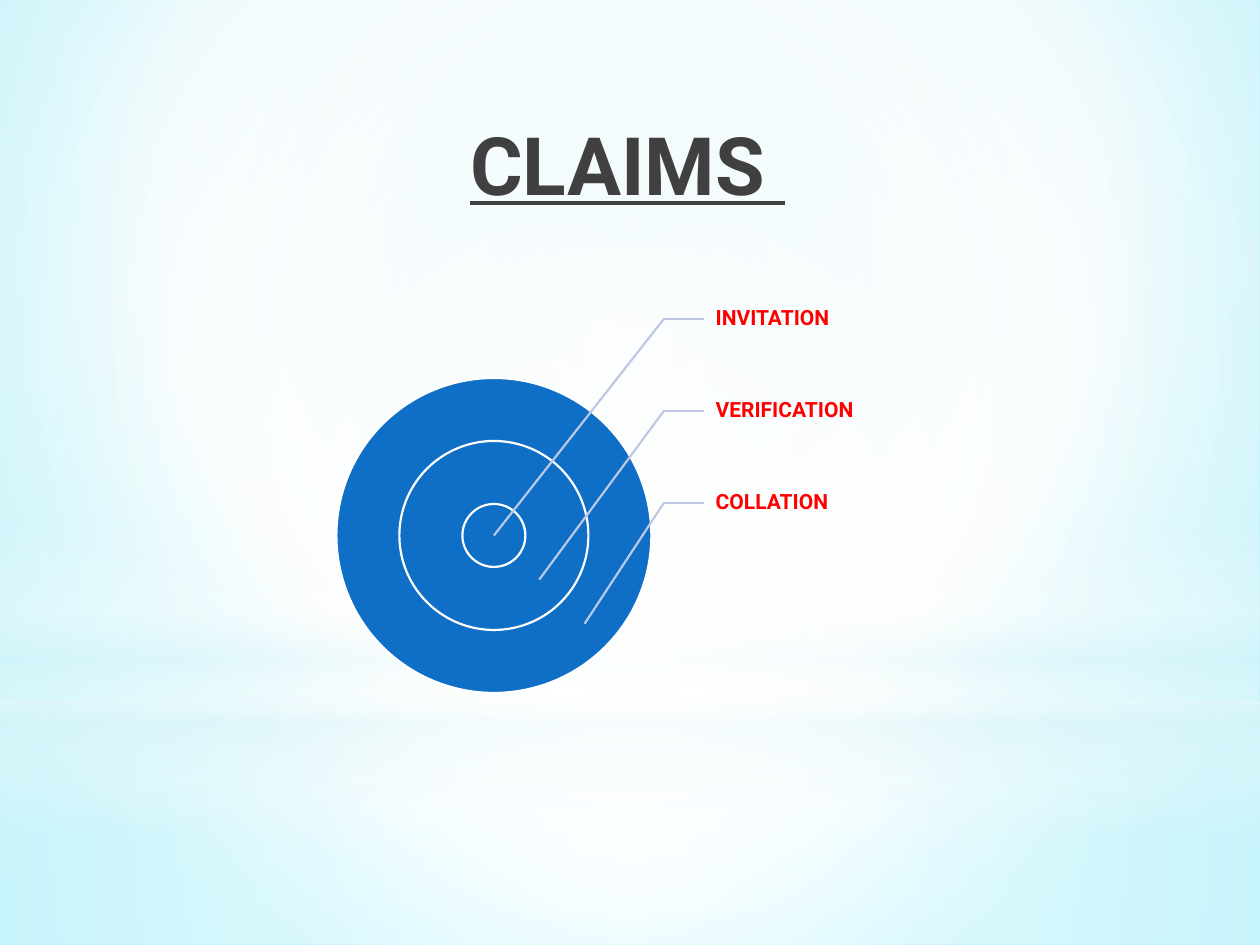
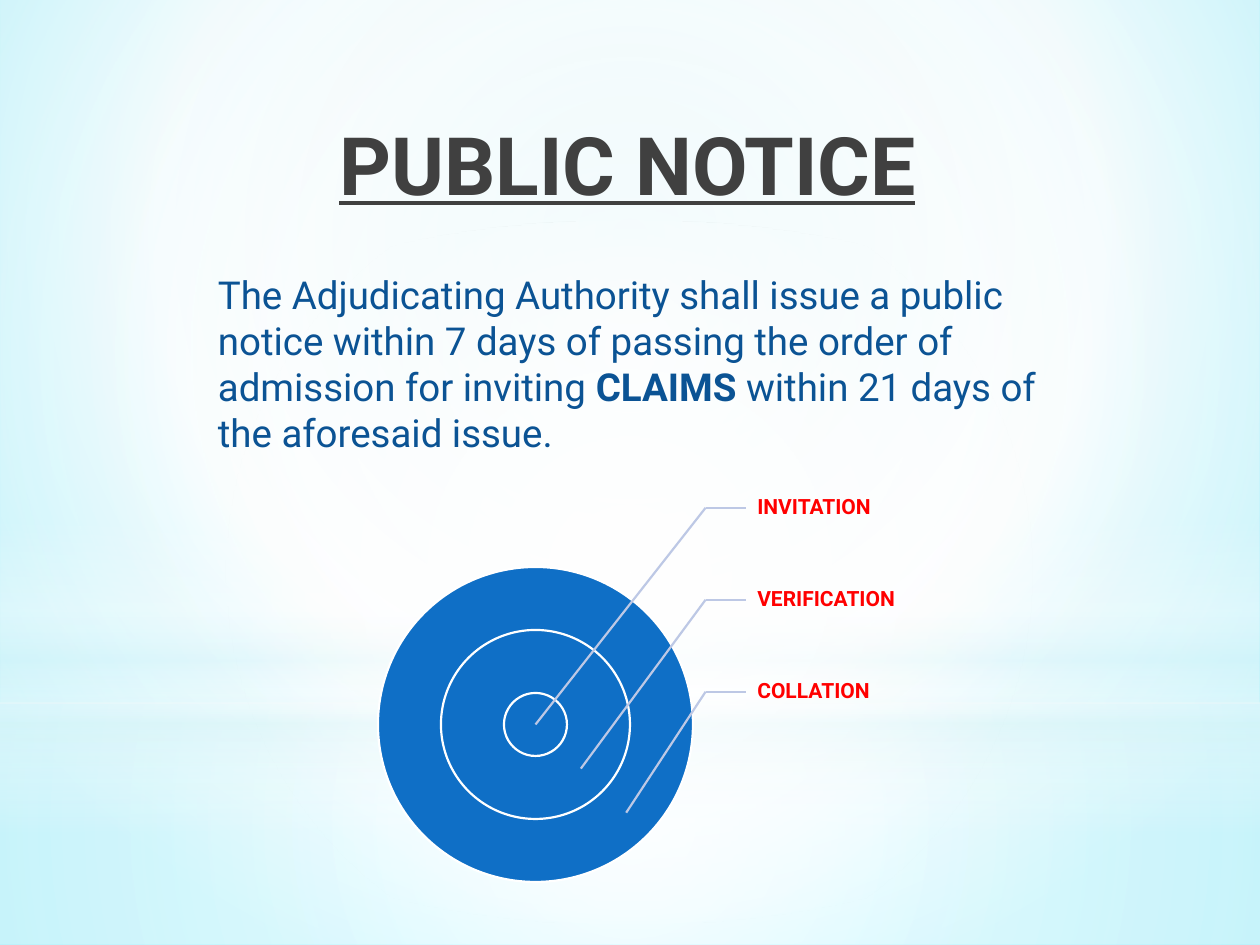
from dataclasses import dataclass

from lxml.etree import SubElement
from pptx import Presentation
from pptx.dml.color import RGBColor
from pptx.enum.shapes import MSO_CONNECTOR, MSO_SHAPE
from pptx.enum.text import MSO_ANCHOR, PP_ALIGN
from pptx.oxml.ns import qn
from pptx.util import Inches, Pt


@dataclass(frozen=True)
class Theme:
    font: str = "Roboto"
    title: str = "404040"
    body: str = "0B5394"
    label: str = "FF0000"
    ring: str = "0F6FC6"
    ring_edge: str = "FFFFFF"
    leader: str = "BDC8E5"
    title_size: float = 46
    title_leading: float = 54
    body_size: float = 22
    body_leading: float = 26.3
    label_size: float = 12
    line_width: float = 1.25


@dataclass(frozen=True)
class Box:
    left: float
    top: float
    width: float
    height: float

    def lengths(self) -> tuple:
        return tuple(Inches(v) for v in (self.left, self.top, self.width, self.height))


@dataclass(frozen=True)
class Gradient:
    """Stops are (position %, colour, opacity %); without a focus it runs downwards."""
    stops: tuple
    focus: tuple | None = None


@dataclass(frozen=True)
class Glow:
    box: Box
    outline: MSO_SHAPE
    gradient: Gradient


@dataclass(frozen=True)
class Phrase:
    text: str
    bold: bool = False


@dataclass(frozen=True)
class ClaimsSlide:
    title: str
    center_x: float
    center_y: float
    body: tuple = ()


THEME = Theme()
MIDDLE = (50, 50, 50, 50)
BACKGROUND = Gradient(
    ((0, "CAF0F6", 100), (60, "FFFFFF", 100), (100, "79EDFF", 100)), (20, 10, 20, 60))
GLOWS = (
    Glow(Box(0, 5.58, 10, 1.92), MSO_SHAPE.RECTANGLE, Gradient(
        ((0, "FFFFFF", 91), (37, "FFFFFF", 76), (100, "DBF5F9", 79)), MIDDLE)),
    Glow(Box(0, 0, 10, 5.58), MSO_SHAPE.RECTANGLE, Gradient(
        ((0, "FFFFFF", 89), (48, "FFFFFF", 62), (100, "DBF5F9", 79)), MIDDLE)),
    Glow(Box(0, 4.12, 10, 2.5), MSO_SHAPE.RECTANGLE, Gradient(
        ((0, "FFFFFF", 0), (29, "FFFFFF", 30), (45, "DBF5F9", 40),
         (55, "FFFFFF", 26), (65, "DBF5F9", 60), (100, "FFFFFF", 0)))),
    Glow(Box(0, 1.75, 10, 5.58), MSO_SHAPE.OVAL, Gradient(
        ((0, "FFFFFF", 100), (56, "FFFFFF", 0)), MIDDLE)),
)
TITLE_BOX = Box(1.42, 0.83, 7.12, 1)
BODY_BOX = Box(1.58, 2.08, 7, 1.75)
STEPS = ("INVITATION", "VERIFICATION", "COLLATION")
RING_DIAMETERS = (2.5, 1.5, 0.5)
STEP_PITCH = 0.73
SLIDES = (
    ClaimsSlide("CLAIMS ", 3.92, 4.25),
    ClaimsSlide("PUBLIC NOTICE", 4.25, 5.75, (
        Phrase("The Adjudicating Authority shall issue a public notice within 7 days "
               "of passing the order of admission for inviting "),
        Phrase("CLAIMS", bold=True),
        Phrase(" within 21 days of the aforesaid issue."),
    )),
)


def apply_gradient(properties, gradient: Gradient) -> None:
    """Swap the solid fill in a properties element for a gradient."""
    solid = properties.find(qn("a:solidFill"))
    fill = properties.makeelement(qn("a:gradFill"), {"rotWithShape": "1"})
    stops = SubElement(fill, qn("a:gsLst"))
    for position, color, opacity in gradient.stops:
        stop = SubElement(stops, qn("a:gs"), pos=str(position * 1000))
        rgb = SubElement(stop, qn("a:srgbClr"), val=color)
        if opacity < 100:
            SubElement(rgb, qn("a:alpha"), val=str(opacity * 1000))
    if gradient.focus:
        circle = SubElement(fill, qn("a:path"), {"path": "circle"})
        sides = {side: str(v * 1000) for side, v in zip("ltrb", gradient.focus)}
        SubElement(circle, qn("a:fillToRect"), sides)
    else:
        SubElement(fill, qn("a:lin"), ang="5400000", scaled="0")
    properties.replace(solid, fill)


def decorate_layout(layout, slide) -> None:
    """Give the layout its background and glows, which every slide then shows."""
    for placeholder in list(layout.placeholders):
        layout.element.cSld.spTree.remove(placeholder.element)
    layout.background.fill.solid()
    apply_gradient(layout.element.cSld.find(".//" + qn("p:bgPr")), BACKGROUND)
    for glow in GLOWS:
        shape = slide.shapes.add_shape(glow.outline, *glow.box.lengths())
        shape.shadow.inherit = False
        shape.line.fill.background()
        shape.fill.solid()
        apply_gradient(shape.element.spPr, glow.gradient)
        layout.element.cSld.spTree.append(shape.element)


def add_text(shapes, box: Box, phrases: tuple, size: float, color: str,
             margins: tuple, leading, anchor=MSO_ANCHOR.TOP):
    """Add a wrapped one-paragraph text box and return its paragraph."""
    frame = shapes.add_textbox(*box.lengths()).text_frame
    frame.word_wrap = True
    frame.vertical_anchor = anchor
    (frame.margin_left, frame.margin_top,
     frame.margin_right, frame.margin_bottom) = (Inches(m) for m in margins)
    paragraph = frame.paragraphs[0]
    paragraph.line_spacing = leading
    for phrase in phrases:
        run = paragraph.add_run()
        run.text = phrase.text
        run.font.name = THEME.font
        run.font.size = Pt(size)
        run.font.bold = phrase.bold
        run.font.color.rgb = RGBColor.from_string(color)
    return paragraph


def add_title(slide, title: str) -> None:
    paragraph = add_text(slide.shapes, TITLE_BOX, (Phrase(title, bold=True),),
                         THEME.title_size, THEME.title, (0.1, 0.1, 0.1, 0.05),
                         Pt(THEME.title_leading))
    paragraph.alignment = PP_ALIGN.CENTER
    paragraph.runs[0].font.underline = True


def add_leader(shapes, start: tuple, end: tuple) -> None:
    leader = shapes.add_connector(MSO_CONNECTOR.STRAIGHT,
                                  *(Inches(v) for v in start + end))
    leader.line.color.rgb = RGBColor.from_string(THEME.leader)
    leader.line.width = Pt(THEME.line_width)
    SubElement(leader.element.spPr, qn("a:effectLst"))


def add_target(slide, x: float, y: float) -> None:
    """Draw the concentric rings around (x, y) with one callout per step."""
    shapes = slide.shapes.add_group_shape().shapes
    for diameter in RING_DIAMETERS:
        box = Box(x - diameter / 2, y - diameter / 2, diameter, diameter)
        ring = shapes.add_shape(MSO_SHAPE.OVAL, *box.lengths())
        ring.shadow.inherit = False
        ring.fill.solid()
        ring.fill.fore_color.rgb = RGBColor.from_string(THEME.ring)
        ring.line.color.rgb = RGBColor.from_string(THEME.ring_edge)
        ring.line.width = Pt(THEME.line_width)
    elbow_x, label_x = x + 1.35, x + 1.67
    for index, step in enumerate(STEPS):
        step_y = y - 1.72 + index * STEP_PITCH
        add_text(shapes, Box(label_x, step_y - STEP_PITCH / 2, 1.25, STEP_PITCH),
                 (Phrase(step, bold=True),), THEME.label_size, THEME.label,
                 (0.09, 0.02, 0.02, 0.02), 0.9, MSO_ANCHOR.MIDDLE)
        add_leader(shapes, (elbow_x, step_y), (label_x, step_y))
        add_leader(shapes, (elbow_x, step_y), (x + 0.36 * index, y + 0.35 * index))


def main() -> None:
    deck = Presentation()
    deck.slide_width, deck.slide_height = Inches(10), Inches(7.5)
    blank = deck.slide_layouts[6]
    for index, content in enumerate(SLIDES):
        slide = deck.slides.add_slide(blank)
        if index == 0:
            decorate_layout(blank, slide)
        add_title(slide, content.title)
        if content.body:
            add_text(slide.shapes, BODY_BOX, content.body, THEME.body_size, THEME.body,
                     (0.15, 0.07, 0.1, 0.05), Pt(THEME.body_leading))
        add_target(slide, content.center_x, content.center_y)
    deck.save("out.pptx")


if __name__ == "__main__":
    main()
